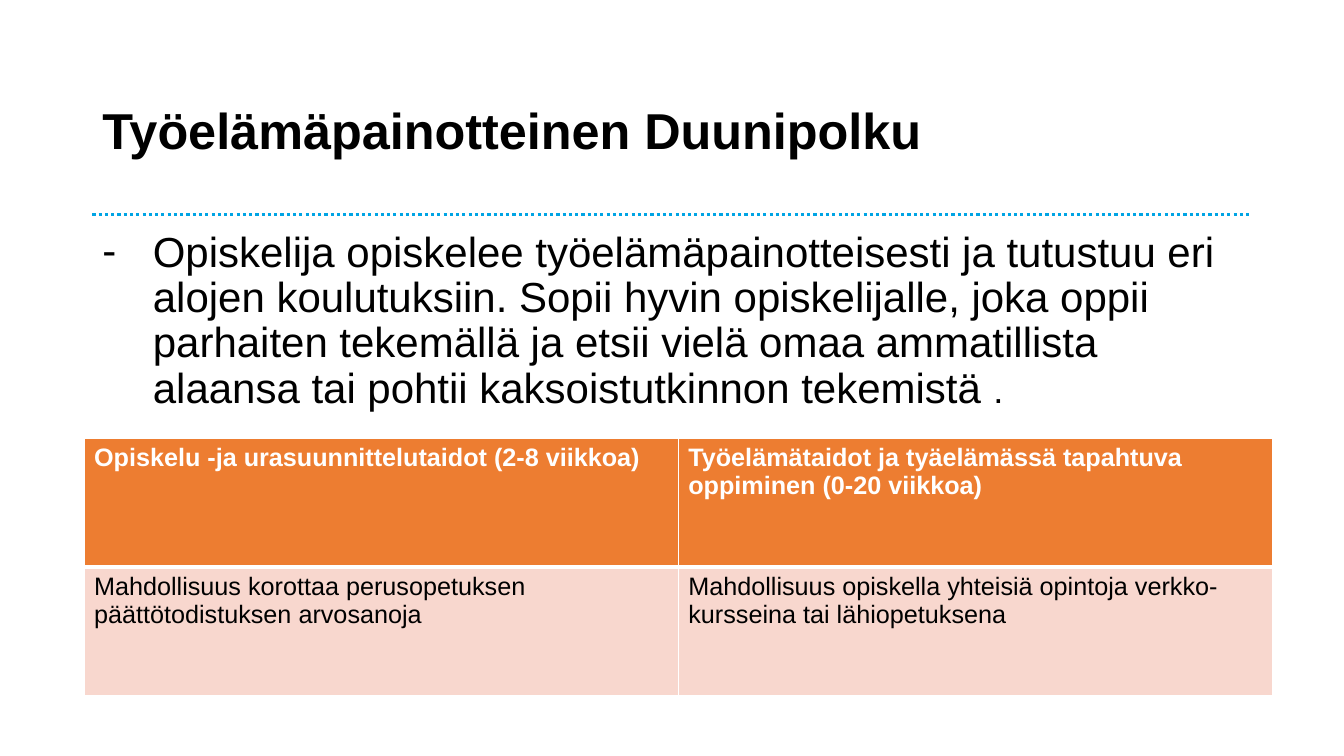
"""Build the slide on the work-oriented Duunipolku study path."""
from dataclasses import dataclass

from pptx import Presentation
from pptx.dml.color import RGBColor as RGB
from pptx.enum.dml import MSO_LINE
from pptx.enum.shapes import MSO_CONNECTOR
from pptx.enum.text import MSO_ANCHOR, MSO_AUTO_SIZE, PP_ALIGN
from pptx.oxml.ns import qn
from pptx.util import Pt
from lxml.etree import SubElement


@dataclass(frozen=True)
class Theme:
    font: str = "Arial"
    black: str = "000000"
    white: str = "FFFFFF"
    rule: str = "00A4E4"
    header: str = "ED7D31"
    cell: str = "F8D7CE"
    title_size: int = 36
    body_size: int = 30
    stop_size: int = 26
    table_size: int = 18


THEME = Theme()
LEFT, WIDTH = 66, 828


def add_run(p, text, size, color=THEME.black, bold=False):
    r = p.add_run()
    r.text = text
    r.font.name = THEME.font
    r.font.size = Pt(size)
    r.font.bold = bold
    r.font.color.rgb = RGB.from_string(color)


def add_border(cell, side, width):
    ln = SubElement(cell._tc.get_or_add_tcPr(), qn(f"a:ln{side}"), w=str(Pt(width)))
    fill = SubElement(ln, qn("a:solidFill"))
    SubElement(fill, qn("a:srgbClr"), val=THEME.white)


prs = Presentation()
prs.slide_width, prs.slide_height = Pt(960), Pt(540)
s = prs.slides.add_slide(prs.slide_layouts[1])

rule = s.shapes.add_connector(
    MSO_CONNECTOR.STRAIGHT, Pt(LEFT), Pt(153.4), Pt(LEFT + WIDTH), Pt(153.4))
rule.line.color.rgb = RGB.from_string(THEME.rule)
rule.line.width = Pt(2.25)
rule.line.dash_style = MSO_LINE.ROUND_DOT
SubElement(rule._element.spPr, qn("a:effectLst"))

title, body = s.shapes.title, s.placeholders[1]
for sp, top, height, anchor in (
        (title, 43.2, 104.4, MSO_ANCHOR.MIDDLE),
        (body, 161.3, 336.2, MSO_ANCHOR.TOP)):
    sp.left, sp.top, sp.width, sp.height = Pt(LEFT), Pt(top), Pt(WIDTH), Pt(height)
    tf = sp.text_frame
    tf.word_wrap = True
    tf.auto_size = MSO_AUTO_SIZE.NONE
    tf.vertical_anchor = anchor
    p = tf.paragraphs[0]
    p.alignment = PP_ALIGN.LEFT
    p.line_spacing = 0.9
    p.space_before = Pt(0)

add_run(title.text_frame.paragraphs[0], "Työelämäpainotteinen Duunipolku",
        THEME.title_size, bold=True)

p = body.text_frame.paragraphs[0]
pPr = p._p.get_or_add_pPr()
pPr.set("marL", str(Pt(36)))
pPr.set("indent", str(Pt(-36)))
SubElement(pPr, qn("a:buFont"), typeface=THEME.font)
SubElement(pPr, qn("a:buChar"), char="-")
add_run(p, "Opiskelija opiskelee työelämäpainotteisesti ja tutustuu eri alojen "
           "koulutuksiin. Sopii hyvin opiskelijalle, joka oppii parhaiten tekemällä "
           "ja etsii vielä omaa ammatillista alaansa tai pohtii kaksoistutkinnon "
           "tekemistä ", THEME.body_size)
add_run(p, ".", THEME.stop_size)

ROWS = (
    ("Opiskelu -ja urasuunnittelutaidot (2-8 viikkoa)",
     "Työelämätaidot ja tyäelämässä tapahtuva oppiminen (0-20 viikkoa)"),
    ("Mahdollisuus korottaa perusopetuksen päättötodistuksen arvosanoja",
     "Mahdollisuus opiskella yhteisiä opintoja verkko-kursseina tai lähiopetuksena"),
)
STYLES = (
    (THEME.header, THEME.white, True, {"L": 1, "R": 1, "T": 1, "B": 3}),
    (THEME.cell, THEME.black, False, {"L": 1, "R": 1, "T": 3, "B": 1}),
)
table = s.shapes.add_table(2, 2, Pt(60), Pt(313.2), Pt(849), Pt(183.8)).table
for i, (texts, (fill, color, bold, borders)) in enumerate(zip(ROWS, STYLES)):
    for j, text in enumerate(texts):
        cell = table.cell(i, j)
        for side, width in borders.items():
            add_border(cell, side, width)
        cell.fill.solid()
        cell.fill.fore_color.rgb = RGB.from_string(fill)
        add_run(cell.text_frame.paragraphs[0], text, THEME.table_size, color, bold)

prs.save("out.pptx")
